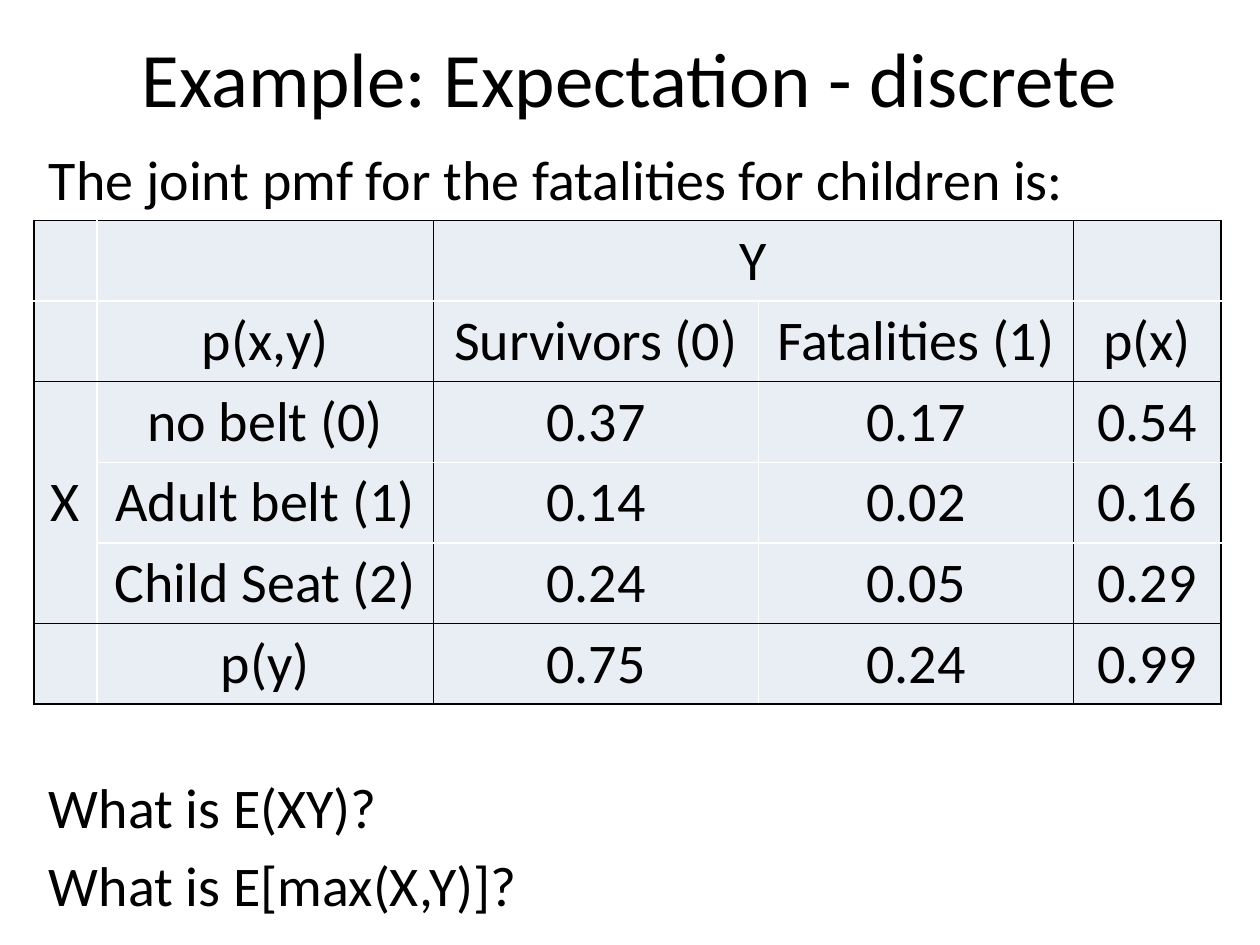
from lxml.etree import SubElement
from pptx import Presentation
from pptx.dml.color import RGBColor
from pptx.enum.text import MSO_ANCHOR, PP_ALIGN
from pptx.oxml.ns import qn
from pptx.util import Inches, Pt

BLACK, WHITE, PALE = "000000", "FFFFFF", "E9EDF4"


def style(p, size, align):
    p.alignment = align
    for r in p.runs:
        r.font.name = "Calibri"
        r.font.size = Pt(size)
        r.font.color.rgb = RGBColor.from_string(BLACK)


def add_border(cell, side, color):
    ln = SubElement(cell._tc.get_or_add_tcPr(), qn(f"a:{side}"), w=str(Pt(1)))
    fill = SubElement(ln, qn("a:solidFill"))
    SubElement(fill, qn("a:srgbClr"), val=color)


prs = Presentation()
prs.slide_width, prs.slide_height = Inches(10), Inches(7.5)
s = prs.slides.add_slide(prs.slide_layouts[6])

# Title, introduction and questions: top, left, width, height, size, alignment, lines
texts = [
    (0.3, 0, 10, 0.62, 44, PP_ALIGN.CENTER, ["Example: Expectation - discrete"]),
    (1.1, 0.29, 9.42, 0.64, 32, PP_ALIGN.LEFT,
     ["The joint pmf for the fatalities for children is:"]),
    (6.08, 0.29, 9.42, 1.25, 32, PP_ALIGN.LEFT,
     ["What is E(XY)?", "What is E[max(X,Y)]?"]),
]
for top, left, width, height, size, align, lines in texts:
    tf = s.shapes.add_textbox(Inches(left), Inches(top), Inches(width), Inches(height)).text_frame
    tf.word_wrap = True
    tf.vertical_anchor = MSO_ANCHOR.MIDDLE if size == 44 else MSO_ANCHOR.TOP
    tf.text = "\n".join(lines)
    for i, p in enumerate(tf.paragraphs):
        style(p, size, align)
        if i:
            p.space_before = Pt(6)

# Joint pmf table
rows = [
    ["", "", "Y", "", ""],
    ["", "p(x,y)", "Survivors (0)", "Fatalities (1)", "p(x)"],
    ["X", "no belt (0)", "0.37", "0.17", "0.54"],
    ["", "Adult belt (1)", "0.14", "0.02", "0.16"],
    ["", "Child Seat (2)", "0.24", "0.05", "0.29"],
    ["", "p(y)", "0.75", "0.24", "0.99"],
]
col_widths = [0.5, 2.67, 2.58, 2.5, 1.17]
row_height = 0.64
table = s.shapes.add_table(len(rows), len(col_widths), Inches(0.27), Inches(1.75),
                           Inches(sum(col_widths)), Inches(row_height * len(rows))).table
for col, width in zip(table.columns, col_widths):
    col.width = Inches(width)
for row in table.rows:
    row.height = Inches(row_height)
table.cell(0, 2).merge(table.cell(0, 3))
table.cell(2, 0).merge(table.cell(4, 0))

# Grid lines between the blocks are black, those inside a block white
black_cols, black_rows = {0, 2, 4, 5}, {0, 2, 5, 6}
for i, values in enumerate(rows):
    for j, value in enumerate(values):
        cell = table.cell(i, j)
        if cell.is_spanned:
            continue
        cell.text = value
        cell.vertical_anchor = MSO_ANCHOR.MIDDLE
        style(cell.text_frame.paragraphs[0], 32, PP_ALIGN.CENTER)
        right = j + (cell.span_width if cell.is_merge_origin else 1)
        bottom = i + (cell.span_height if cell.is_merge_origin else 1)
        for side, edge, black in [("lnL", j, black_cols), ("lnR", right, black_cols),
                                  ("lnT", i, black_rows), ("lnB", bottom, black_rows)]:
            add_border(cell, side, BLACK if edge in black else WHITE)
        cell.fill.solid()
        cell.fill.fore_color.rgb = RGBColor.from_string(PALE)

prs.save("out.pptx")
